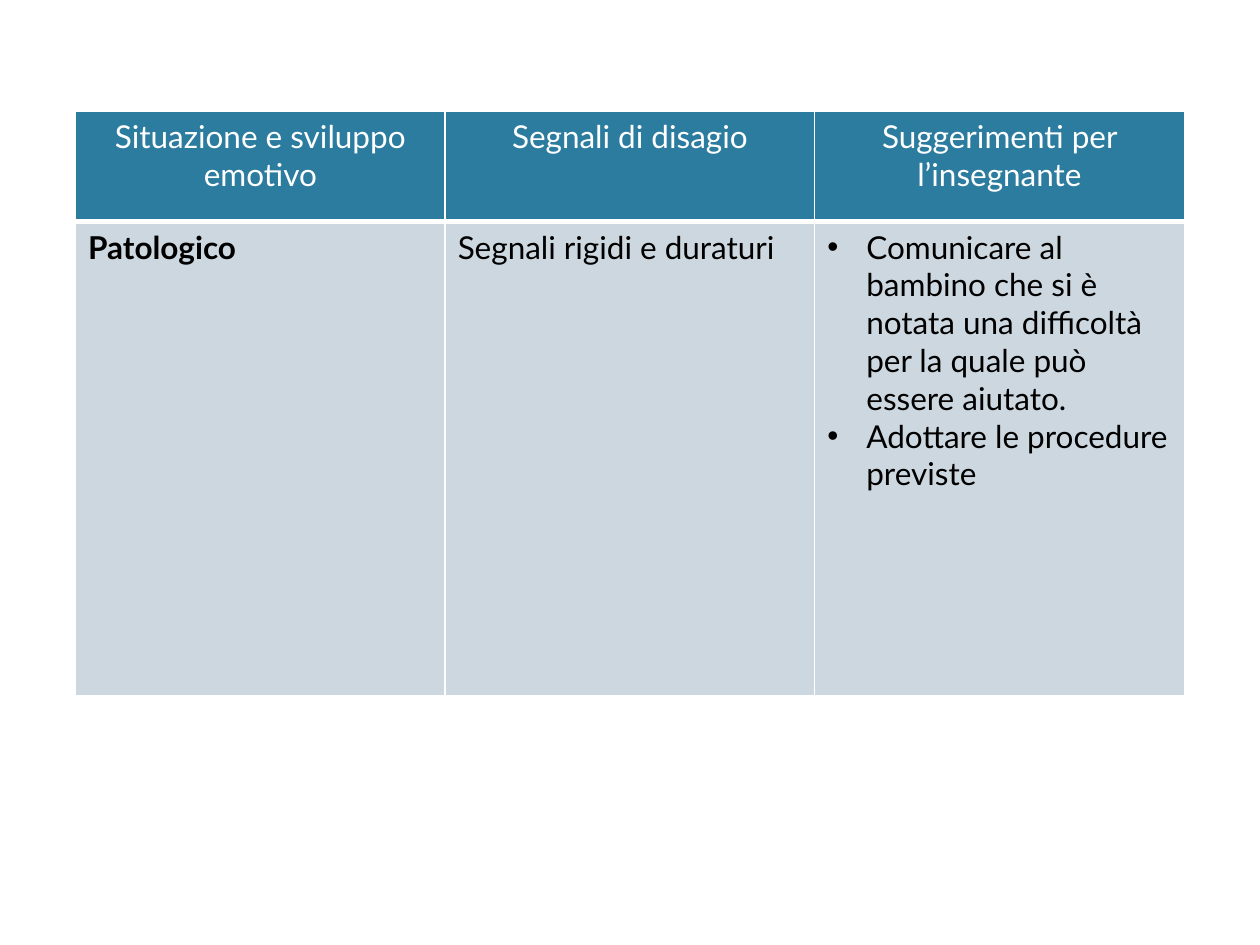
from dataclasses import dataclass

import pptx
import pptx.dml.color
import pptx.enum.text
import pptx.oxml
import pptx.oxml.ns
import pptx.util
from pptx.util import Inches


@dataclass(frozen=True)
class Theme:
    font: str = "Lato"
    size: int = 18
    header_fill: str = "2C7C9F"
    header_text: str = "FFFFFF"
    body_fill: str = "CDD7DF"
    body_text: str = "000000"
    border: str = "FFFFFF"
    thin: int = 1
    thick: int = 3


THEME = Theme()
HEADERS = [
    "Situazione e sviluppo emotivo",
    "Segnali di disagio",
    "Suggerimenti per l’insegnante",
]
SUGGESTIONS = [
    "Comunicare al bambino che si è notata una difficoltà per la quale può essere aiutato.",
    "Adottare le procedure previste",
]


def color(value):
    return pptx.dml.color.RGBColor.from_string(value)


def set_borders(cell, bottom):
    """Draw the four cell borders; they must precede the fill in the XML."""
    properties = cell._tc.get_or_add_tcPr()
    widths = {"lnL": THEME.thin, "lnR": THEME.thin, "lnT": THEME.thin, "lnB": bottom}
    for position, (side, width) in enumerate(widths.items()):
        line = pptx.oxml.parse_xml(
            f'<a:{side} {pptx.oxml.ns.nsdecls("a")} w="{pptx.util.Pt(width)}">'
            f'<a:solidFill><a:srgbClr val="{THEME.border}"/></a:solidFill></a:{side}>'
        )
        properties.insert(position, line)


def add_bullet(para):
    properties = para._p.get_or_add_pPr()
    indent = Inches(0.31)
    properties.set("marL", str(indent))
    properties.set("indent", str(-indent))
    properties.append(pptx.oxml.parse_xml(
        f'<a:buFont {pptx.oxml.ns.nsdecls("a")} typeface="Arial"/>'))
    properties.append(pptx.oxml.parse_xml(
        f'<a:buChar {pptx.oxml.ns.nsdecls("a")} char="•"/>'))


def fill_cell(cell, texts, fill, text_color, bold=False, centered=False,
              bulleted=False, bottom=THEME.thin):
    cell.fill.solid()
    cell.fill.fore_color.rgb = color(fill)
    set_borders(cell, bottom)
    for index, text in enumerate(texts):
        frame = cell.text_frame
        para = frame.add_paragraph() if index else frame.paragraphs[0]
        if centered:
            para.alignment = pptx.enum.text.PP_ALIGN.CENTER
        if bulleted:
            add_bullet(para)
        span = para.add_run()
        span.text = text
        span.font.name = THEME.font
        span.font.size = pptx.util.Pt(THEME.size)
        span.font.bold = bold
        span.font.color.rgb = color(text_color)


def add_grid(page):
    frame = page.shapes.add_table(
        2, len(HEADERS), Inches(0.6), Inches(0.88), Inches(8.8), Inches(4.64))
    table = frame.table
    for row, height in zip(table.rows, (0.88, 3.76)):
        row.height = Inches(height)
    return table


def main():
    deck = pptx.Presentation()
    deck.slide_width, deck.slide_height = Inches(10), Inches(7.5)
    page = deck.slides.add_slide(deck.slide_layouts[6])
    table = add_grid(page)

    # Header row
    for column, header in enumerate(HEADERS):
        fill_cell(table.cell(0, column), [header], THEME.header_fill,
                  THEME.header_text, centered=True, bottom=THEME.thick)

    # Body row
    body = [
        (["Patologico"], {"bold": True}),
        (["Segnali rigidi e duraturi"], {}),
        (SUGGESTIONS, {"bulleted": True}),
    ]
    for column, (texts, style) in enumerate(body):
        fill_cell(table.cell(1, column), texts, THEME.body_fill,
                  THEME.body_text, **style)

    deck.save("out.pptx")


if __name__ == "__main__":
    main()
